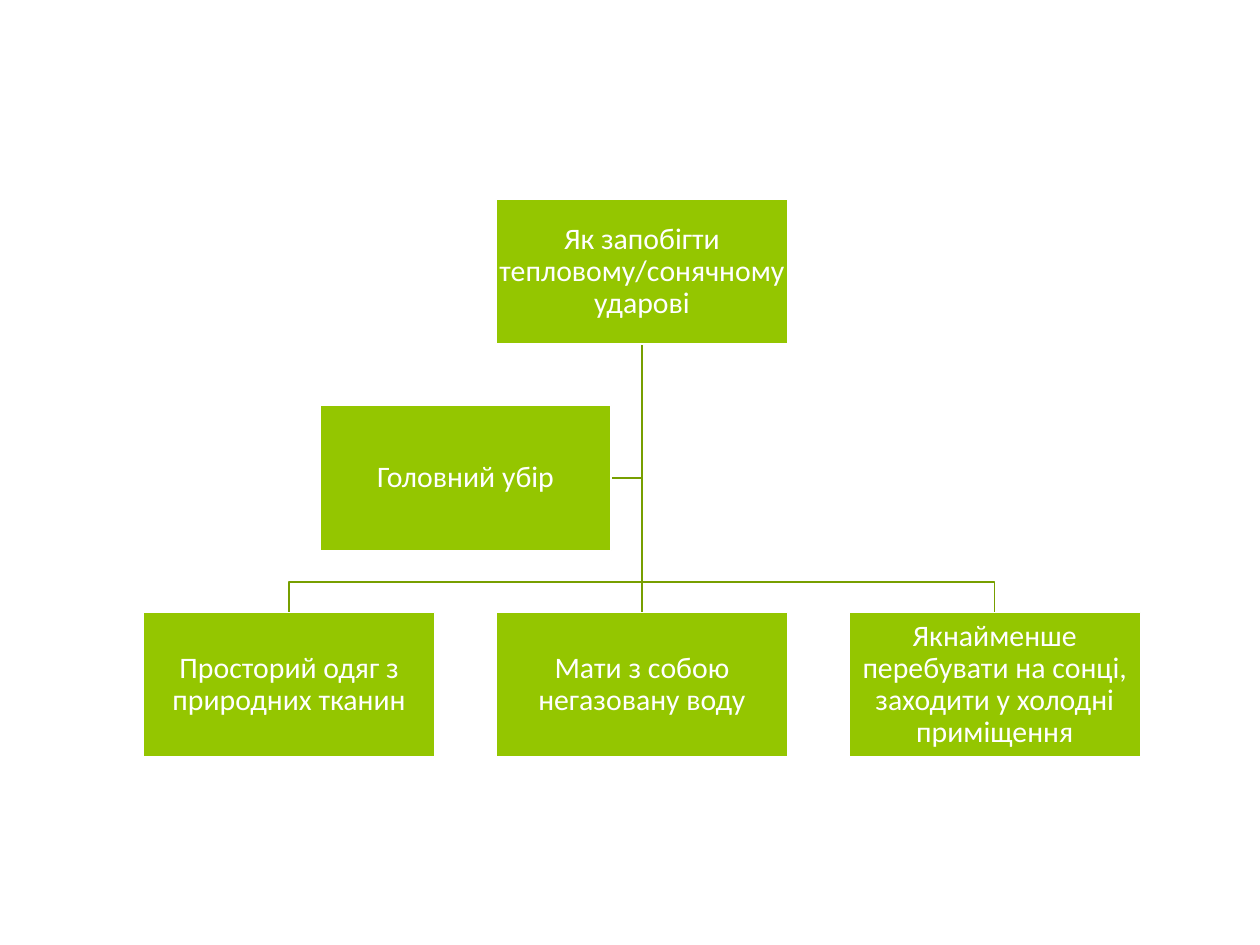
import pptx
import pptx.dml.color
import pptx.enum.shapes
import pptx.enum.text
import pptx.oxml
import pptx.util

Inches, Pt = pptx.util.Inches, pptx.util.Pt

# Each box: text, column, row; the first one is the root.
ROOT = ("Як запобігти тепловому/сонячному ударові", 1, 0)
ASSISTANT = ("Головний убір", 0.5, 1)
CHILDREN = [
    ("Просторий одяг з природних тканин", 0, 2),
    ("Мати з собою негазовану воду", 1, 2),
    ("Якнайменше перебувати на сонці, заходити у холодні приміщення", 2, 2),
]

THEME = {
    "font": "Calibri", "size": Pt(17), "text": "FFFFFF",
    "fill": "94C600", "border": "FFFFFF", "link": "779F00", "line": Pt(0.85),
}
LEFT, TOP = 1.14, 1.58
COLUMN, ROW = 2.8, 1.64
WIDTH, HEIGHT = 2.31, 1.15
BUS_GAP = 0.24


def color(name):
    return pptx.dml.color.RGBColor.from_string(THEME[name])


def corner(node):
    return LEFT + node[1] * COLUMN, TOP + node[2] * ROW


def style_line(shape, name):
    shape.line.color.rgb = color(name)
    shape.line.width = THEME["line"]


def add_link(page, points):
    """Draw a straight or bent line through points given in inches."""
    points = [(Inches(x), Inches(y)) for x, y in points]
    if len(points) == 2:
        link = page.shapes.add_connector(
            pptx.enum.shapes.MSO_CONNECTOR.STRAIGHT, *points[0], *points[1])
        properties = link._element.spPr
    else:
        builder = page.shapes.build_freeform(*points[0])
        builder.add_line_segments(points[1:], close=False)
        link = builder.convert_to_shape()
        link.fill.background()
        link.shadow.inherit = False
    style_line(link, "link")
    if len(points) == 2:
        properties.append(pptx.oxml.parse_xml(
            '<a:effectLst xmlns:a="http://schemas.openxmlformats.org/drawingml/2006/main"/>'))


def add_box(page, node):
    x, y = corner(node)
    box = page.shapes.add_shape(
        pptx.enum.shapes.MSO_SHAPE.RECTANGLE,
        Inches(x), Inches(y), Inches(WIDTH), Inches(HEIGHT))
    box.shadow.inherit = False
    box.fill.solid()
    box.fill.fore_color.rgb = color("fill")
    style_line(box, "border")

    frame = box.text_frame
    frame.word_wrap = True
    frame.vertical_anchor = pptx.enum.text.MSO_ANCHOR.MIDDLE
    frame.margin_left = frame.margin_right = Inches(0.01)
    frame.margin_top = frame.margin_bottom = Inches(0.01)
    frame.text = node[0]
    para = frame.paragraphs[0]
    para.alignment = pptx.enum.text.PP_ALIGN.CENTER
    para.line_spacing = 0.9
    font = para.runs[0].font
    font.name, font.size = THEME["font"], THEME["size"]
    font.color.rgb = color("text")


def main():
    deck = pptx.Presentation()
    deck.slide_width, deck.slide_height = Inches(10), Inches(7.5)
    page = deck.slides.add_slide(deck.slide_layouts[6])

    root_x, root_y = corner(ROOT)
    start = (root_x + WIDTH / 2, root_y + HEIGHT)
    side_x, side_y = corner(ASSISTANT)
    middle = side_y + HEIGHT / 2
    add_link(page, [start, (start[0], middle), (side_x + WIDTH, middle)])
    for child in CHILDREN:
        x, y = corner(child)
        center = x + WIDTH / 2
        bend = [(start[0], y - BUS_GAP), (center, y - BUS_GAP)]
        add_link(page, [start, *(bend if child[1] != ROOT[1] else []), (center, y)])

    for node in [ROOT, *CHILDREN, ASSISTANT]:
        add_box(page, node)
    deck.save("out.pptx")


if __name__ == "__main__":
    main()
